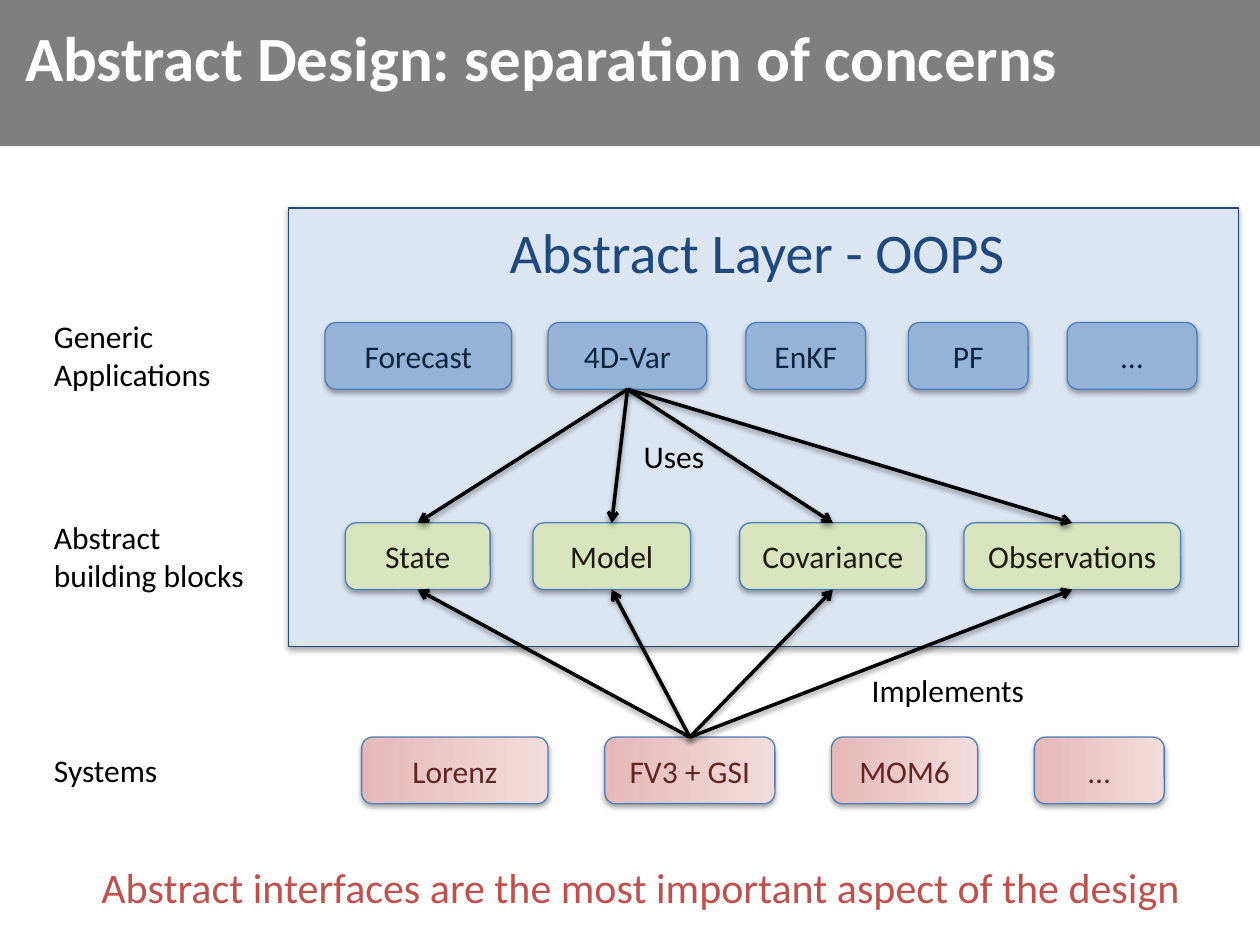
from dataclasses import dataclass

from lxml import etree
from pptx import Presentation
from pptx.dml.color import RGBColor
from pptx.enum.shapes import MSO_CONNECTOR, MSO_SHAPE
from pptx.enum.text import MSO_ANCHOR, PP_ALIGN
from pptx.oxml.ns import qn
from pptx.util import Inches, Pt

RECTANGLE, ROUNDED = MSO_SHAPE.RECTANGLE, MSO_SHAPE.ROUNDED_RECTANGLE
STRAIGHT = MSO_CONNECTOR.STRAIGHT
LEFT, CENTER = PP_ALIGN.LEFT, PP_ALIGN.CENTER
TOP, MIDDLE = MSO_ANCHOR.TOP, MSO_ANCHOR.MIDDLE
TOP_SITE, BOTTOM_SITE = 0, 2


@dataclass(frozen=True)
class Theme:
    font: str = "Calibri"
    title_size: int = 36
    layer_size: int = 32
    message_size: int = 24
    body_size: int = 18
    white: str = "FFFFFF"
    black: str = "000000"
    navy: str = "1F497D"
    layer: str = "DCE6F2"
    outline: str = "4B7EBC"
    red: str = "C0504D"
    app_fill: tuple = ("95B3D7",)
    app_text: str = "0F243E"
    block_fill: tuple = ("D7E4BD",)
    block_text: str = "1E1C11"
    system_fill: tuple = ("E6B9B8", "F2DCDB")
    system_text: str = "632523"


THEME = Theme()


def write(frame, lines, size, color, align=LEFT, anchor=TOP, wrap=True, bold=False):
    """Fill a text frame with one paragraph per line."""
    frame.word_wrap = wrap
    frame.vertical_anchor = anchor
    for index, line in enumerate(lines):
        para = frame.paragraphs[0] if index == 0 else frame.add_paragraph()
        para.alignment = align
        span = para.add_run()
        span.text = line
        span.font.name = THEME.font
        span.font.size = Pt(size)
        span.font.bold = bold
        span.font.color.rgb = RGBColor.from_string(color)


def cast_shadow(item, distance, opacity):
    """Give a shape or connector a soft shadow straight below it."""
    properties = item._element.spPr
    effects = properties.find(qn("a:effectLst"))
    if effects is None:
        effects = etree.SubElement(properties, qn("a:effectLst"))
    shadow = etree.SubElement(
        effects, qn("a:outerShdw"), blurRad=str(Pt(3.1)), dist=str(Pt(distance)),
        dir="5400000", rotWithShape="0")
    tint = etree.SubElement(shadow, qn("a:srgbClr"), val=THEME.black)
    etree.SubElement(tint, qn("a:alpha"), val=str(opacity * 1000))


deck = Presentation()
deck.slide_width, deck.slide_height = Inches(10), Inches(7.5)
page = deck.slides.add_slide(deck.slide_layouts[6])
shapes = page.shapes

# Title band
band = shapes.add_shape(RECTANGLE, 0, 0, Inches(10), Inches(1.16))
band.shadow.inherit = False
band.line.fill.background()
band.fill.solid()
band.fill.fore_color.rgb = RGBColor.from_string(THEME.black)
band_color = band._element.spPr.find(qn("a:solidFill"))[0]
etree.SubElement(band_color, qn("a:alpha"), val="50000")
title = shapes.add_textbox(Inches(0.1), 0, Inches(9.28), Inches(0.89))
write(title.text_frame, ["Abstract Design: separation of concerns"],
      THEME.title_size, THEME.white, anchor=MIDDLE, bold=True)

# Abstract layer
layer = shapes.add_shape(RECTANGLE, Inches(2.29), Inches(1.65), Inches(7.54), Inches(3.48))
layer.shadow.inherit = False
layer.fill.solid()
layer.fill.fore_color.rgb = RGBColor.from_string(THEME.layer)
layer.line.color.rgb = RGBColor.from_string(THEME.navy)
layer.line.width = Pt(0.75)
cast_shadow(layer, 1.8, 35)

# Rows of boxes: top, fill, text colour, then label, left and width of each box
rows = [
    (2.56, THEME.app_fill, THEME.app_text,
     [("Forecast", 2.58, 1.48), ("4D-Var", 4.35, 1.26), ("EnKF", 5.92, 0.95),
      ("PF", 7.21, 0.95), ("…", 8.47, 1.03)]),
    (4.15, THEME.block_fill, THEME.block_text,
     [("State", 2.74, 1.15), ("Model", 4.23, 1.25), ("Covariance", 5.87, 1.48),
      ("Observations", 7.65, 1.72)]),
    (5.85, THEME.system_fill, THEME.system_text,
     [("Lorenz", 2.87, 1.48), ("FV3 + GSI", 4.8, 1.35), ("MOM6", 6.6, 1.16),
      ("…", 8.21, 1.03)]),
]
row_boxes = []
for top, colors, text_color, entries in rows:
    boxes = []
    for label, left, width in entries:
        box = shapes.add_shape(ROUNDED, Inches(left), Inches(top), Inches(width), Inches(0.53))
        box.shadow.inherit = False
        if len(colors) == 1:
            box.fill.solid()
            box.fill.fore_color.rgb = RGBColor.from_string(colors[0])
        else:
            box.fill.gradient()
            box.fill.gradient_angle = 0
            for stop, color in zip(box.fill.gradient_stops, colors):
                stop.color.rgb = RGBColor.from_string(color)
        box.line.color.rgb = RGBColor.from_string(THEME.outline)
        box.line.width = Pt(0.75)
        cast_shadow(box, 1.8, 35)
        write(box.text_frame, [label], THEME.body_size, text_color, CENTER, MIDDLE)
        boxes.append(box)
    row_boxes.append(boxes)

# Arrows from one application and one system to every building block
applications, blocks, systems = row_boxes
for source, source_site, block_site in [
    (applications[1], BOTTOM_SITE, TOP_SITE),
    (systems[1], TOP_SITE, BOTTOM_SITE),
]:
    for block in blocks:
        arrow = shapes.add_connector(STRAIGHT, 0, 0, 0, 0)
        arrow.begin_connect(source, source_site)
        arrow.end_connect(block, block_site)
        arrow.line.color.rgb = RGBColor.from_string(THEME.black)
        arrow.line.width = Pt(2)
        etree.SubElement(arrow.line._get_or_add_ln(), qn("a:tailEnd"), type="arrow")
        cast_shadow(arrow, 1.6, 38)

# Captions: lines, left, top, width, height, size, colour, alignment, wrap
body, black = THEME.body_size, THEME.black
captions = [
    (["Generic", "Applications"], 0.33, 2.47, 1.46, 0.71, body, black, LEFT, False),
    (["Abstract building blocks"], 0.33, 4.06, 1.81, 0.71, body, black, LEFT, True),
    (["Systems"], 0.33, 5.91, 1.81, 0.4, body, black, LEFT, True),
    (["Uses"], 5.01, 3.42, 0.69, 0.4, body, black, LEFT, False),
    (["Implements"], 6.82, 5.28, 1.43, 0.4, body, black, LEFT, False),
    (["Abstract interfaces are the most important aspect of the design"],
     0.64, 6.79, 8.89, 0.5, THEME.message_size, THEME.red, CENTER, False),
    (["Abstract Layer - OOPS"], 3.81, 1.68, 4.4, 0.64,
     THEME.layer_size, THEME.navy, CENTER, True),
]
for lines, left, top, width, height, size, color, align, wrap in captions:
    caption = shapes.add_textbox(Inches(left), Inches(top), Inches(width), Inches(height))
    write(caption.text_frame, lines, size, color, align, wrap=wrap)

deck.save("out.pptx")
